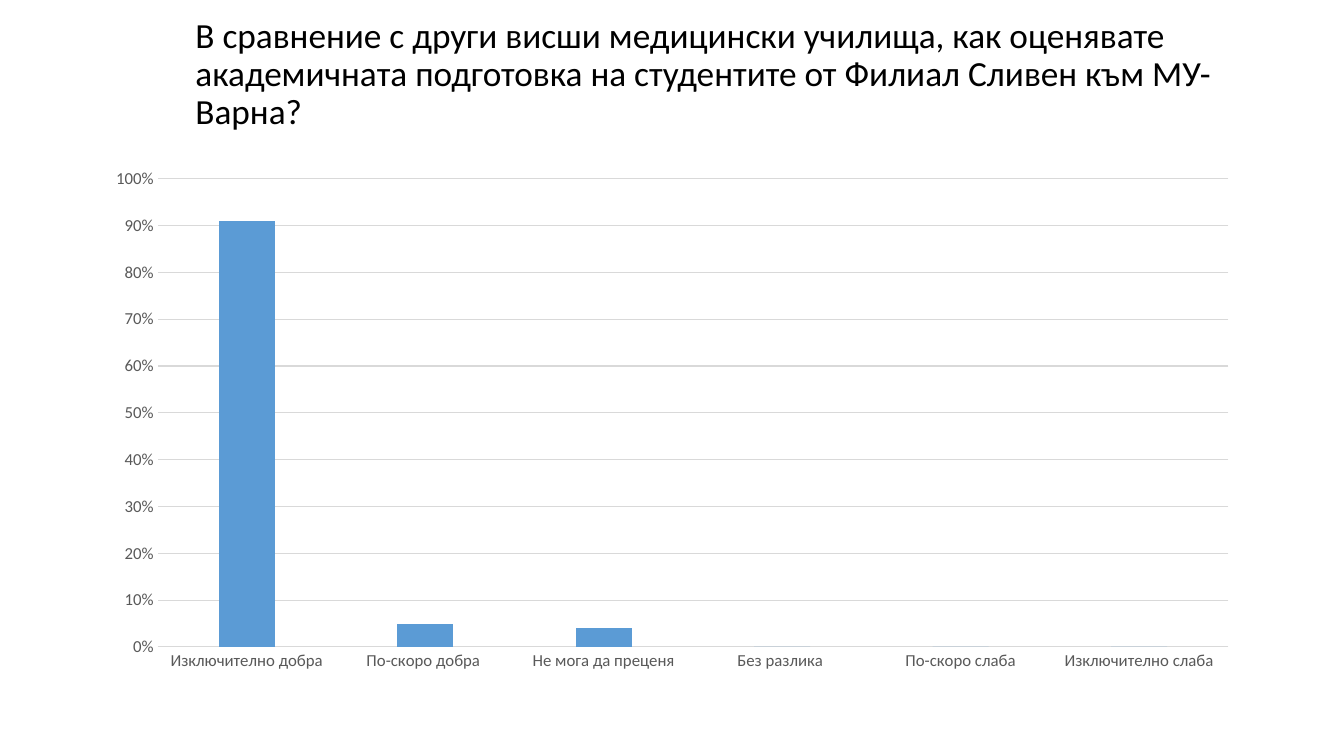
from pptx import Presentation
from pptx.chart.data import CategoryChartData
from pptx.dml.color import RGBColor
from pptx.enum.chart import XL_CHART_TYPE, XL_TICK_MARK
from pptx.enum.text import MSO_ANCHOR, MSO_AUTO_SIZE, PP_ALIGN
from pptx.util import Cm, Pt

TITLE = ("В сравнение с други висши медицински училища, как оценявате "
         "академичната подготовка на студентите от Филиал Сливен към МУ-Варна?")
RATINGS = {
    "Изключително добра": 0.91,
    "По-скоро добра ": 0.05,
    "Не мога да преценя": 0.04,
    "Без разлика ": 0,
    "По-скоро слаба": 0,
    "Изключително слаба": 0,
}

BLACK = RGBColor(0x00, 0x00, 0x00)
GREY_TEXT = RGBColor(0x59, 0x59, 0x59)
GREY_LINE = RGBColor(0xD9, 0xD9, 0xD9)
BLUE = RGBColor(0x5B, 0x9B, 0xD5)
FONT = "Calibri"
COLUMNS = XL_CHART_TYPE.COLUMN_CLUSTERED
NO_TICKS = XL_TICK_MARK.NONE

TITLE_BOX = (Cm(4.67), Cm(0.38), Cm(26.87), Cm(3.02))
CHART_BOX = (Cm(2.34), Cm(3.99), Cm(29.2), Cm(13.18))

FRAME_FORMAT = {
    "word_wrap": True,
    "auto_size": MSO_AUTO_SIZE.NONE,
    "vertical_anchor": MSO_ANCHOR.MIDDLE,
}
PARA_FORMAT = {"alignment": PP_ALIGN.LEFT, "line_spacing": 0.9}
AXIS_FORMAT = {"major_tick_mark": NO_TICKS, "minor_tick_mark": NO_TICKS}
VALUE_FORMAT = {
    "minimum_scale": 0,
    "maximum_scale": 1,
    "major_unit": 0.1,
    "has_major_gridlines": True,
}


def apply_format(target, values):
    for name, value in values.items():
        setattr(target, name, value)


def format_font(font, size, color):
    apply_format(font, {"name": FONT, "size": Pt(size), "bold": False})
    font.color.rgb = color


def format_line(line):
    line.color.rgb = GREY_LINE
    line.width = Pt(0.75)


def place_title(page):
    box = page.shapes.title
    box.left, box.top, box.width, box.height = TITLE_BOX
    frame = box.text_frame
    apply_format(frame, FRAME_FORMAT)
    para = frame.paragraphs[0]
    apply_format(para, PARA_FORMAT)
    span = para.add_run()
    span.text = TITLE
    format_font(span.font, 25.2, BLACK)


def add_ratings_chart(page):
    data = CategoryChartData(number_format="0%")
    data.categories = list(RATINGS)
    data.add_series("Series 1", list(RATINGS.values()))
    chart = page.shapes.add_chart(COLUMNS, *CHART_BOX, data).chart
    apply_format(chart, {"has_legend": False, "has_title": False})
    format_font(chart.font, 10, BLACK)

    plot = chart.plots[0]
    apply_format(plot, {"gap_width": 219, "overlap": -27, "vary_by_categories": False})
    bars = plot.series[0].format.fill
    bars.solid()
    bars.fore_color.rgb = BLUE

    for axis in (chart.category_axis, chart.value_axis):
        apply_format(axis, AXIS_FORMAT)
        format_font(axis.tick_labels.font, 12, GREY_TEXT)
    format_line(chart.category_axis.format.line)

    value_axis = chart.value_axis
    apply_format(value_axis, VALUE_FORMAT)
    apply_format(value_axis.tick_labels,
                 {"number_format": "0%", "number_format_is_linked": False})
    value_axis.format.line.fill.background()
    format_line(value_axis.major_gridlines.format.line)


def main():
    deck = Presentation()
    deck.slide_width, deck.slide_height = Cm(33.87), Cm(19.05)
    page = deck.slides.add_slide(deck.slide_layouts[5])
    place_title(page)
    add_ratings_chart(page)
    deck.save("out.pptx")


if __name__ == "__main__":
    main()
